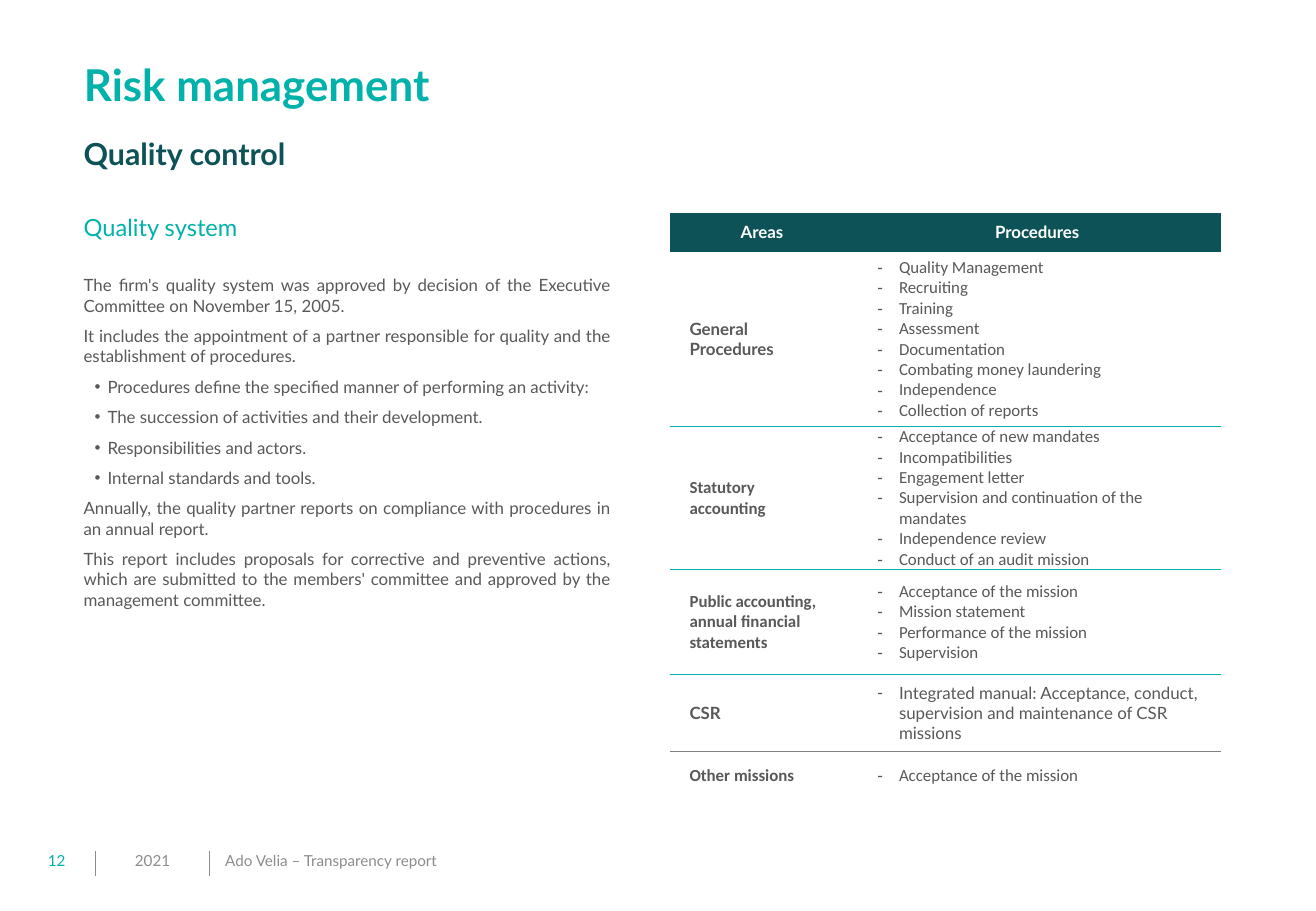
from lxml.etree import SubElement
from pptx import Presentation
from pptx.dml.color import RGBColor
from pptx.enum.shapes import MSO_CONNECTOR
from pptx.enum.text import MSO_ANCHOR, MSO_AUTO_SIZE, PP_ALIGN
from pptx.oxml.ns import qn
from pptx.util import Cm, Pt

TEAL = RGBColor(0x00, 0xB2, 0xA9)
DARK = RGBColor(0x0D, 0x52, 0x57)
TEXT = RGBColor(0x59, 0x59, 0x59)
GREY = RGBColor(0x8C, 0x8C, 0x8C)
RULE = RGBColor(0x80, 0x80, 0x80)
WHITE = RGBColor(0xFF, 0xFF, 0xFF)

TITLE = "Risk management"
TOPIC = "Quality control"
HEAD = "Quality system"
BODY = [
    ("", "The firm's quality system was approved by decision of the Executive Committee on November 15, 2005."),
    ("", "It includes the appointment of a partner responsible for quality and the establishment of procedures."),
    ("•", "Procedures define the specified manner of performing an activity:"),
    ("•", "The succession of activities and their development."),
    ("•", "Responsibilities and actors."),
    ("•", "Internal standards and tools."),
    ("", "Annually, the quality partner reports on compliance with procedures in an annual report."),
    ("", "This report includes proposals for corrective and preventive actions, which are submitted to the members' committee and approved by the management committee."),
]
LABELS = ["Areas", "Procedures"]
AREAS = [
    ("General Procedures", "Lato", "Calibri", 3.66, (TEAL, 1), [
        "Quality Management", "Recruiting", "Training", "Assessment", "Documentation",
        "Combating money laundering", "Independence", "Collection of reports"]),
    ("Statutory accounting", "Calibri", "Calibri", 2.99, (TEAL, 1), [
        "Acceptance of new mandates", "Incompatibilities", "Engagement letter",
        "Supervision and continuation of the mandates", "Independence review",
        "Conduct of an audit mission"]),
    ("Public accounting, annual financial statements", "Calibri", "Calibri", 2.2, (TEAL, 1), [
        "Acceptance of the mission", "Mission statement", "Performance of the mission",
        "Supervision"]),
    ("CSR", "Lato", "Lato", 1.6, (RULE, 0.75), [
        "Integrated manual: Acceptance, conduct, supervision and maintenance of CSR missions"]),
    ("Other missions", "Calibri", "Calibri", 1.02, None, ["Acceptance of the mission"]),
]
FOOT = [
    ("12", 0.75, 1.0, TEAL, PP_ALIGN.LEFT),
    ("2021", 2.25, 1.88, GREY, PP_ALIGN.CENTER),
    ("Ado Velia – Transparency report", 4.46, 17.0, GREY, PP_ALIGN.LEFT),
]
BARS = [2.0, 4.38]
WIDTHS = [3.83, 7.68]
HEAD_ROW = 0.81


def put(item, values):
    for name, value in values.items():
        setattr(item, name, value)


def write(par, text, size, color, bold=False, face="Lato", **form):
    put(par, form)
    run = par.add_run()
    run.text = text
    put(run.font, {"name": face, "size": Pt(size), "bold": bold})
    run.font.color.rgb = color


def mark(par, sign, left, hang):
    props = par._p.get_or_add_pPr()
    props.set("marL", str(Cm(left)))
    props.set("indent", str(-Cm(hang)))
    SubElement(props, qn("a:buFont"), typeface="Arial")
    SubElement(props, qn("a:buChar"), char=sign)


def add_box(left, top, width, height, anchor=MSO_ANCHOR.MIDDLE):
    frame = slide.shapes.add_textbox(Cm(left), Cm(top), Cm(width), Cm(height)).text_frame
    put(frame, {"word_wrap": True, "vertical_anchor": anchor})
    return frame


def edge(cell, side, line):
    node = SubElement(cell._tc.get_or_add_tcPr(), qn("a:" + side))
    if line:
        color, width = line
        node.set("w", str(Pt(width)))
        fill = SubElement(node, qn("a:solidFill"))
        SubElement(fill, qn("a:srgbClr"), val=str(color))
    else:
        SubElement(node, qn("a:noFill"))


def dress(cell, fill, above, below, left=0.0, right=0.0):
    put(cell, {
        "margin_left": Cm(left), "margin_right": Cm(right),
        "margin_top": 0, "margin_bottom": 0,
        "vertical_anchor": MSO_ANCHOR.MIDDLE,
    })
    for side, line in (("lnL", None), ("lnR", None), ("lnT", above), ("lnB", below)):
        edge(cell, side, line)
    cell.fill.solid()
    cell.fill.fore_color.rgb = fill
    return cell.text_frame


deck = Presentation()
put(deck, {"slide_width": Cm(27.52), "slide_height": Cm(19.05)})
slide = deck.slides.add_slide(deck.slide_layouts[5])

title = slide.shapes.title
put(title, {"left": Cm(1.5), "top": Cm(1), "width": Cm(26.01), "height": Cm(1.5)})
put(title.text_frame, {
    "auto_size": MSO_AUTO_SIZE.NONE, "word_wrap": False,
    "vertical_anchor": MSO_ANCHOR.MIDDLE,
})
write(title.text_frame.paragraphs[0], TITLE, 26, TEAL, True, alignment=PP_ALIGN.LEFT)
write(add_box(1.5, 2.7, 26.01, 1).paragraphs[0], TOPIC, 18, DARK, True)

frame = add_box(1.5, 4.44, 11.51, 9.68, MSO_ANCHOR.TOP)
write(frame.paragraphs[0], HEAD, 14, TEAL, line_spacing=0.8)
for index, (sign, text) in enumerate(BODY):
    par = frame.add_paragraph()
    if sign:
        mark(par, sign, 0.5, 0.27)
    write(par, text, 10, TEXT, alignment=PP_ALIGN.JUSTIFY,
          space_before=Pt(6 if index else 20.2))

heights = [HEAD_ROW] + [area[3] for area in AREAS]
table = slide.shapes.add_table(
    len(heights), len(WIDTHS), Cm(14.02), Cm(4.45), Cm(sum(WIDTHS)), Cm(sum(heights))).table
put(table, {"first_row": False, "horz_banding": False})
for column, width in zip(table.columns, WIDTHS):
    column.width = Cm(width)
for row, height in zip(table.rows, heights):
    row.height = Cm(height)

for index, label in enumerate(LABELS):
    frame = dress(table.cell(0, index), DARK, None, None)
    write(frame.paragraphs[0], label, 10, WHITE, True, alignment=PP_ALIGN.CENTER)

above = None
for index, (area, face, font, height, below, steps) in enumerate(AREAS, 1):
    frame = dress(table.cell(index, 0), WHITE, above, below, 0.4, 0.45)
    write(frame.paragraphs[0], area, 10, TEXT, True, face)
    frame = dress(table.cell(index, 1), WHITE, above, below, right=0.45)
    for count, step in enumerate(steps):
        par = frame.add_paragraph() if count else frame.paragraphs[0]
        mark(par, "-", 0.95, 0.45)
        write(par, step, 10, TEXT, face=font)
    above = below

for text, left, width, color, align in FOOT:
    write(add_box(left, 17.49, width, 1).paragraphs[0], text, 9, color, alignment=align)
for left in BARS:
    bar = slide.shapes.add_connector(
        MSO_CONNECTOR.STRAIGHT, Cm(left), Cm(17.8), Cm(left), Cm(18.31))
    bar.line.color.rgb = GREY
    bar.line.width = Pt(0.75)
    SubElement(bar._element.spPr, qn("a:effectLst"))

deck.save("out.pptx")
